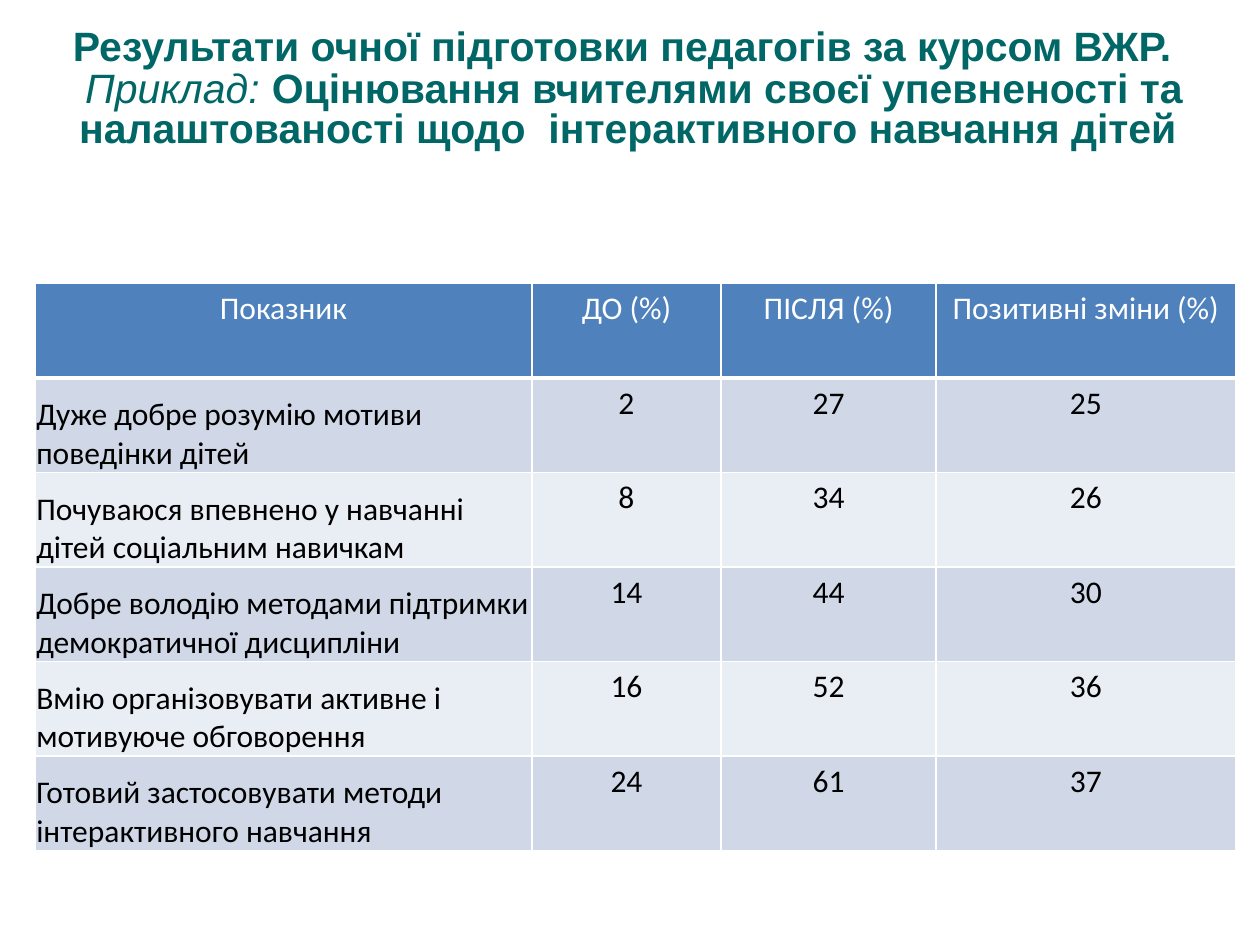
from dataclasses import dataclass

from lxml.etree import SubElement
from pptx import Presentation
from pptx.dml.color import RGBColor
from pptx.enum.text import MSO_ANCHOR as Anchor, MSO_AUTO_SIZE as AutoSize, PP_ALIGN as Align
from pptx.oxml.ns import qn
from pptx.util import Pt


@dataclass(frozen=True)
class Theme:
    title: str = "006666"
    header: str = "4F81BD"
    bands: tuple = ("D0D8E8", "E9EDF4")
    light: str = "FFFFFF"
    dark: str = "000000"
    title_font: str = "Arial"
    table_font: str = "Calibri"
    title_size: float = 23.4
    space_size: float = 25.2
    table_size: float = 18


@dataclass(frozen=True)
class Indicator:
    name: str
    before: int
    after: int

    @property
    def values(self) -> tuple:
        return self.before, self.after, self.after - self.before


THEME = Theme()
HEADERS = ("Показник", "ДО (%)", "ПІСЛЯ (%)", "Позитивні зміни (%)")
WIDTHS = (284, 108, 123, 171)
ROW_HEIGHT = 54
INDICATORS = (
    Indicator("Дуже добре розумію мотиви поведінки дітей", 2, 27),
    Indicator("Почуваюся впевнено у навчанні дітей соціальним навичкам", 8, 34),
    Indicator("Добре володію методами підтримки демократичної дисципліни", 14, 44),
    Indicator("Вмію організовувати активне і мотивуюче обговорення", 16, 52),
    Indicator("Готовий застосовувати методи інтерактивного навчання", 24, 61),
)


def add_text(p, text: str, *, size: float, font: str, color: str,
             bold: bool = False, italic: bool = False) -> None:
    r = p.add_run()
    r.text = text
    r.font.size = Pt(size)
    r.font.name = font
    r.font.color.rgb = RGBColor.from_string(color)
    r.font.bold = bold
    r.font.italic = italic


def set_borders(cell, bottom: float) -> None:
    pr = cell._tc.get_or_add_tcPr()
    for i, (side, width) in enumerate((("L", 1), ("R", 1), ("T", 1), ("B", bottom))):
        ln = pr.makeelement(qn(f"a:ln{side}"), {"w": str(Pt(width))})
        fill = SubElement(ln, qn("a:solidFill"))
        SubElement(fill, qn("a:srgbClr"), val=THEME.light)
        pr.insert(i, ln)


def fill_cell(cell, text: str, *, fill: str, color: str,
              align: Align = Align.CENTER, bottom: float = 1) -> None:
    cell.fill.solid()
    cell.fill.fore_color.rgb = RGBColor.from_string(fill)
    set_borders(cell, bottom)
    p = cell.text_frame.paragraphs[0]
    p.alignment = align
    add_text(p, text, size=THEME.table_size, font=THEME.table_font, color=color)


def add_title(s) -> None:
    sp = s.shapes.title
    sp.left, sp.top, sp.width, sp.height = Pt(6), Pt(9.5), Pt(705.5), Pt(85)
    tf = sp.text_frame
    tf.word_wrap = True
    tf.auto_size = AutoSize.NONE
    tf.vertical_anchor = Anchor.MIDDLE
    p = tf.paragraphs[0]
    p.alignment = Align.CENTER
    p.line_spacing = 0.8
    style = dict(font=THEME.title_font, color=THEME.title)
    add_text(p, "Результати очної підготовки педагогів за курсом ВЖР. ",
             size=THEME.title_size, bold=True, **style)
    p.add_line_break()
    for text, size in ((" ", THEME.space_size), ("Приклад:", THEME.title_size),
                       (" ", THEME.space_size)):
        add_text(p, text, size=size, italic=True, **style)
    add_text(p, "Оцінювання вчителями своєї упевненості та налаштованості "
             "щодо  інтерактивного навчання дітей",
             size=THEME.title_size, bold=True, **style)


def add_results(s) -> None:
    rows = len(INDICATORS) + 1
    table = s.shapes.add_table(rows, len(HEADERS), Pt(20), Pt(162),
                               Pt(sum(WIDTHS)), Pt(ROW_HEIGHT * rows)).table
    for col, width in zip(table.columns, WIDTHS):
        col.width = Pt(width)
    for row in table.rows:
        row.height = Pt(ROW_HEIGHT)
    for c, text in enumerate(HEADERS):
        fill_cell(table.cell(0, c), text, fill=THEME.header, color=THEME.light, bottom=3)
    for n, item in enumerate(INDICATORS, 1):
        style = dict(fill=THEME.bands[(n - 1) % 2], color=THEME.dark)
        cell = table.cell(n, 0)
        cell.vertical_anchor = Anchor.BOTTOM
        cell.margin_left = cell.margin_right = cell.margin_top = Pt(0.75)
        cell.margin_bottom = Pt(0)
        fill_cell(cell, item.name, align=Align.LEFT, **style)
        for c, value in enumerate(item.values, 1):
            fill_cell(table.cell(n, c), str(value), **style)


def main() -> None:
    prs = Presentation()
    prs.slide_width, prs.slide_height = Pt(720), Pt(540)
    s = prs.slides.add_slide(prs.slide_layouts[5])
    add_results(s)
    add_title(s)
    prs.save("out.pptx")


if __name__ == "__main__":
    main()
